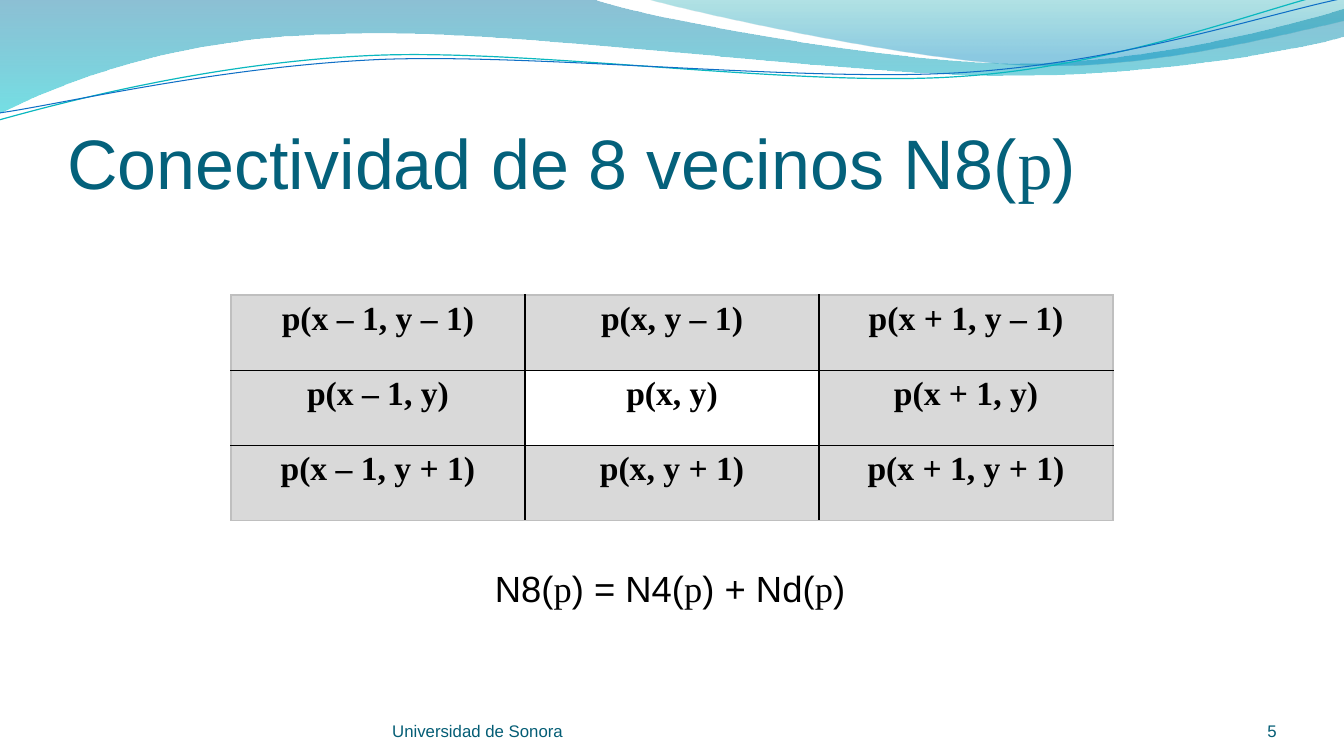
from dataclasses import dataclass
from itertools import islice

from lxml import etree
from pptx import Presentation
from pptx.dml.color import RGBColor
from pptx.enum.text import MSO_ANCHOR, MSO_AUTO_SIZE, PP_ALIGN
from pptx.oxml.ns import qn
from pptx.util import Emu, Inches, Pt

LEFT, CENTER, RIGHT = PP_ALIGN.LEFT, PP_ALIGN.CENTER, PP_ALIGN.RIGHT
TOP, BOTTOM = MSO_ANCHOR.TOP, MSO_ANCHOR.BOTTOM
NO_AUTOSIZE = MSO_AUTO_SIZE.NONE
W, H = Inches(13.33), Inches(7.5)


@dataclass(frozen=True)
class Theme:
    sans: str = "Arial"
    serif: str = "Times New Roman"
    title: str = "04617B"
    footer: str = "045D75"
    ink: str = "000000"
    neighbour: str = "D9D9D9"
    center: str = "FFFFFF"
    frame: str = "BFBFBF"
    teal_line: str = "0AB8BF"
    blue_line: str = "0F6FC6"
    title_size: int = 50
    formula_size: int = 26
    cell_size: int = 24
    footer_size: int = 12


T = Theme()

BACK_WAVE = [
    [(0, 0)],
    [(5.87, -0.01)],
    [(6.34, 0.17), (8.85, 0.63), (10.11, 0.63)],
    [(11.38, 0.63), (12.78, 0.26), (13.33, 0.09)],
    [(13.35, 0.36)],
    [(13.11, 0.44), (11.6, 0.76), (9.94, 0.75)],
    [(8.29, 0.75), (5.09, 0.28), (3.43, 0.34)],
    [(1.72, 0.36), (0.61, 0.83), (-0.01, 1.13)],
    [(0, 0)],
]
FRONT_WAVE = [
    [(6.39, -0.01)],
    [(6.79, 0.11), (9.09, 0.62), (10.25, 0.65)],
    [(11.41, 0.69), (12.82, 0.32), (13.33, 0.21)],
    [(13.33, 0)],
    [(6.39, -0.01)],
]
TEAL_CURVE = [
    [(-0.01, 1.19)],
    [(0.64, 1.01), (2.11, 0.62), (3.69, 0.55)],
    [(5.27, 0.48), (7.9, 0.87), (9.5, 0.76)],
    [(11.1, 0.66), (12.52, 0.08), (13.31, -0.1)],
]
BLUE_CURVE = [
    [(0, 1.12)],
    [(0.63, 1.03), (2.18, 0.66), (3.78, 0.59)],
    [(5.37, 0.53), (7.96, 0.82), (9.55, 0.72)],
    [(11.15, 0.62), (12.55, 0.14), (13.34, -0.02)],
]


def rgb(color):
    return RGBColor.from_string(color)


def box(left, top, width, height):
    return [Emu(int(side * share / 100))
            for side, share in ((W, left), (H, top), (W, width), (H, height))]


def bend_segments(sp, segments):
    lines = iter(list(sp._element.iter(qn("a:lnTo"))))
    for points in segments:
        group = list(islice(lines, len(points)))
        if len(group) == 3:
            curve = etree.Element(qn("a:cubicBezTo"))
            group[0].addprevious(curve)
            for line in group:
                curve.append(line[0])
                line.getparent().remove(line)


def add_outline(s, segments, close):
    start, *rest = [[(Inches(x), Inches(y)) for x, y in points] for points in segments]
    builder = s.shapes.build_freeform(*start[0])
    builder.add_line_segments([point for points in rest for point in points], close=close)
    sp = builder.convert_to_shape()
    bend_segments(sp, rest)
    sp.shadow.inherit = False
    return sp


def add_wave(s, segments, stops):
    sp = add_outline(s, segments, True)
    sp.line.fill.background()
    sp.fill.gradient()
    sp.fill.gradient_angle = 270
    for stop, (position, color, opacity) in zip(sp.fill.gradient_stops, stops):
        stop.position = position
        stop.color.rgb = rgb(color)
    colors = sp._element.spPr.iter(qn("a:srgbClr"))
    for element, (position, color, opacity) in zip(list(colors), stops):
        etree.SubElement(element, qn("a:alpha"), val=str(opacity * 1000))


def add_curve(s, segments, color, width):
    sp = add_outline(s, segments, False)
    sp.fill.background()
    sp.line.color.rgb = rgb(color)
    sp.line.width = Pt(width)


def style_paragraph(p, size, color, font, align, bold=False):
    p.alignment = align
    p.font.size = Pt(size)
    p.font.color.rgb = rgb(color)
    p.font.name = font
    p.font.bold = bold


def write_formula(p, text):
    for i, part in enumerate(text.split("|")):
        r = p.add_run()
        r.text = part
        r.font.name = T.serif if i % 2 else T.sans


def set_frame(tf, anchor, margins):
    tf.word_wrap = True
    tf.auto_size = NO_AUTOSIZE
    tf.vertical_anchor = anchor
    tf.margin_left, tf.margin_top, tf.margin_right, tf.margin_bottom = map(Inches, margins)


def add_title(s, text, area):
    sp = s.shapes.title
    sp.left, sp.top, sp.width, sp.height = area
    set_frame(sp.text_frame, BOTTOM, (0, 0.05, 0, 0))
    p = sp.text_frame.paragraphs[0]
    style_paragraph(p, T.title_size, T.title, T.sans, LEFT)
    write_formula(p, text)


def add_formula(s, text, area):
    tf = s.shapes.add_textbox(*area).text_frame
    set_frame(tf, TOP, (0.1, 0.05, 0.1, 0.05))
    p = tf.paragraphs[0]
    style_paragraph(p, T.formula_size, T.ink, T.sans, CENTER)
    write_formula(p, text)


def add_footer(s, text, area, align):
    tf = s.shapes.add_textbox(*area).text_frame
    set_frame(tf, BOTTOM, (0, 0, 0, 0))
    tf.text = text
    style_paragraph(tf.paragraphs[0], T.footer_size, T.footer, T.sans, align)


def set_borders(cell, row, col, last):
    tcPr = cell._tc.get_or_add_tcPr()
    sides = (("a:lnL", col == 0), ("a:lnR", col == last),
             ("a:lnT", row == 0), ("a:lnB", row == last))
    for i, (tag, outer) in enumerate(sides):
        ln = etree.Element(qn(tag), w=str(Pt(1)))
        fill = etree.SubElement(ln, qn("a:solidFill"))
        etree.SubElement(fill, qn("a:srgbClr"), val=T.frame if outer else T.ink)
        tcPr.insert(i, ln)


def add_neighbours(s, area):
    xs, ys = ("x – 1", "x", "x + 1"), ("y – 1", "y", "y + 1")
    table = s.shapes.add_table(len(ys), len(xs), *area).table
    table.first_row = table.horz_banding = False
    for row, y in enumerate(ys):
        for col, x in enumerate(xs):
            cell = table.cell(row, col)
            cell.text = f"p({x}, {y})"
            cell.fill.solid()
            is_center = row == col == 1
            cell.fill.fore_color.rgb = rgb(T.center if is_center else T.neighbour)
            style_paragraph(cell.text_frame.paragraphs[0],
                            T.cell_size, T.ink, T.serif, CENTER, True)
            set_borders(cell, row, col, len(xs) - 1)


def main():
    prs = Presentation()
    prs.slide_width, prs.slide_height = W, H
    s = prs.slides.add_slide(prs.slide_layouts[5])
    add_wave(s, BACK_WAVE, [(0, "0074A1", 45), (1, "00C6CF", 55)])
    add_wave(s, FRONT_WAVE, [(0, "00A1A9", 30), (0.8, "008BBF", 45)])
    add_curve(s, TEAL_CURVE, T.teal_line, 0.85)
    add_curve(s, BLUE_CURVE, T.blue_line, 0.75)
    add_title(s, "Conectividad de 8 vecinos N8(|p|)", box(5, 10.27, 90, 16.67))
    add_neighbours(s, box(17.18, 39.03, 65.64, 29.87))
    add_formula(s, "N8(|p|) = N4(|p|) + Nd(|p|)", box(13.02, 74.27, 73.67, 7.2))
    add_footer(s, "Universidad de Sonora", box(29.18, 92.67, 36.68, 5.33), LEFT)
    add_footer(s, "5", box(86.67, 92.67, 8.33, 5.33), RIGHT)
    prs.save("out.pptx")


if __name__ == "__main__":
    main()
